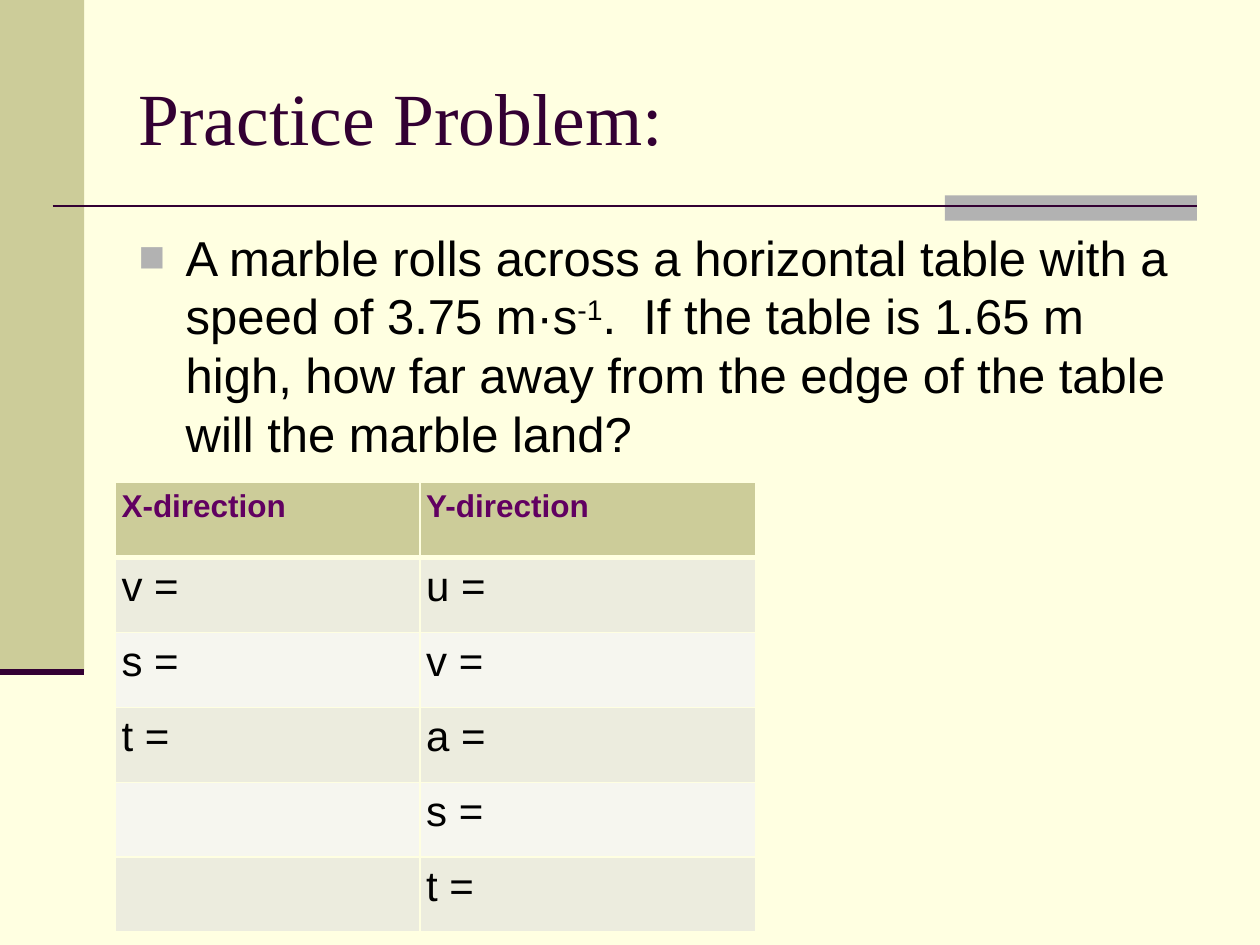
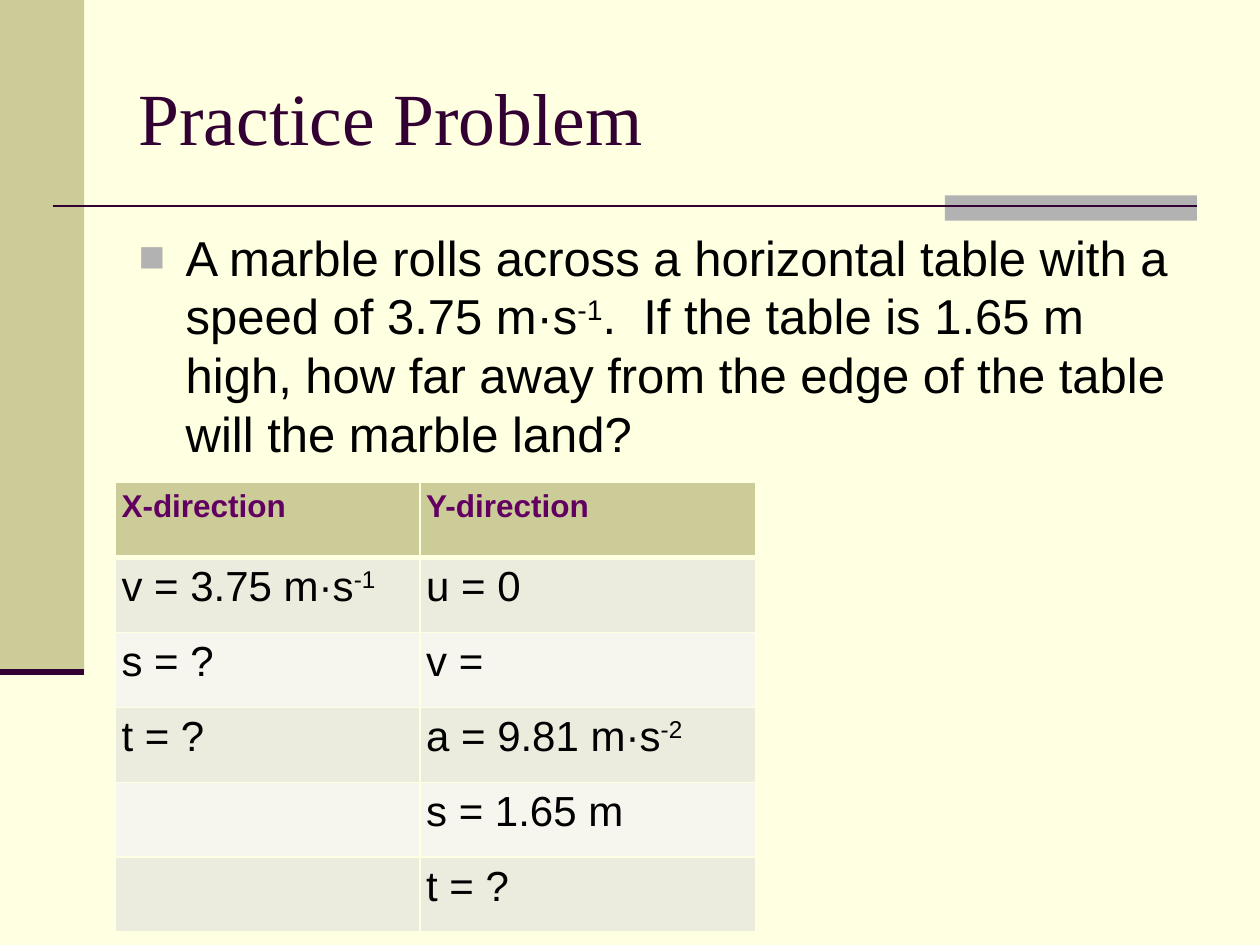
from lxml.etree import SubElement
from pptx import Presentation
from pptx.dml.color import RGBColor
from pptx.enum.shapes import MSO_CONNECTOR, MSO_SHAPE
from pptx.enum.text import MSO_ANCHOR, PP_ALIGN
from pptx.oxml import parse_xml
from pptx.oxml.ns import nsdecls, qn
from pptx.util import Cm, Pt

CREAM, OLIVE, GREY, PLUM = "FFFFE1", "CCCC99", "B2B2B2", "330033"
HEAD, BLACK = "610061", "000000"
BANDS = ["F6F6EF", "ECECDE"]

TASK = ("A marble rolls across a horizontal table with a speed of 3.75 m·s^-1^."
        "  If the table is 1.65 m high, how far away from the edge of the table"
        " will the marble land?")
NAMES = ("X-direction", "Y-direction")
PAGES = [
    ("Practice Problem:",
     [NAMES, ("v =", "u ="), ("s =", "v ="), ("t =", "a ="),
      ("", "s ="), ("", "t =")]),
    ("Practice Problem",
     [NAMES, ("v = 3.75 m·s^-1^", "u = 0"), ("s = ?", "v ="),
      ("t = ?", "a = 9.81 m·s^-2^"), ("", "s = 1.65 m"), ("", "t = ?")]),
]


def paint(target, tone):
    """Give a fill or a line one solid colour."""
    target.solid()
    target.fore_color.rgb = RGBColor.from_string(tone)


def write(par, text, face, size, tone, bold=False):
    """Write text in one style; parts between ^ marks are raised."""
    for i, part in enumerate(text.split("^")):
        if part:
            run = par.add_run()
            run.text = part
            font = run.font
            font.name, font.size, font.bold = face, Pt(size), bold
            font.color.rgb = RGBColor.from_string(tone)
            if i % 2:
                run._r.get_or_add_rPr().set("baseline", "30000")


deck = Presentation()
deck.slide_width, deck.slide_height = Cm(25.4), Cm(19.05)
paint(deck.slide_master.background.fill, CREAM)

for name, rows in PAGES:
    slide = deck.slides.add_slide(deck.slide_layouts[1])
    shapes = slide.shapes

    # Side band and accent bar
    for box, tone in [((0, 0, 1.7, 13.55), OLIVE),
                      ((19.05, 3.94, 5.08, 0.51), GREY)]:
        band = shapes.add_shape(MSO_SHAPE.RECTANGLE, *map(Cm, box))
        band.shadow.inherit = False
        paint(band.fill, tone)
        band.line.fill.background()

    # Rules under the title and the side band
    for left, right, y, width in [(1.06, 24.13, 4.15, 1.5),
                                  (0, 1.7, 13.55, 3.5)]:
        rule = shapes.add_connector(MSO_CONNECTOR.STRAIGHT,
                                    Cm(left), Cm(y), Cm(right), Cm(y))
        paint(rule.line.fill, PLUM)
        rule.line.width = Pt(width)
        SubElement(rule._element.spPr, qn("a:effectLst"))

    # Title
    title = shapes.title
    title.left, title.top, title.width, title.height = map(
        Cm, (2.54, 0.76, 21.59, 3.18))
    title.text_frame.vertical_anchor = MSO_ANCHOR.MIDDLE
    par = title.text_frame.paragraphs[0]
    par.alignment = PP_ALIGN.LEFT
    write(par, name, "Times New Roman", 42, PLUM)

    # Problem text with a square bullet
    body = slide.placeholders[1]
    body.left, body.top, body.width, body.height = map(
        Cm, (2.54, 4.45, 21.59, 12.57))
    par = body.text_frame.paragraphs[0]
    write(par, TASK, "Arial", 28, BLACK)
    par.space_before = Pt(5.6)
    props = par._p.get_or_add_pPr()
    props.set("marL", str(Cm(0.95)))
    props.set("indent", str(Cm(-0.95)))
    for mark in (f'<a:buClr {nsdecls("a")}><a:srgbClr val="{GREY}"/></a:buClr>',
                 f'<a:buSzPct {nsdecls("a")} val="90000"/>',
                 f'<a:buFont {nsdecls("a")} typeface="Arial"/>',
                 f'<a:buChar {nsdecls("a")} char="■"/>'):
        props.append(parse_xml(mark))

    # Table of knowns and unknowns
    grid = shapes.add_table(len(rows), 2, Cm(2.33), Cm(9.73),
                            Cm(12.91), Cm(9.06)).table
    for col, width in zip(grid.columns, (6.14, 6.77)):
        col.width = Cm(width)
    for i, row in enumerate(rows):
        grid.rows[i].height = Cm(1.51)
        for j, text in enumerate(row):
            cell = grid.cell(i, j)
            cell.margin_left = cell.margin_right = Cm(0.12)
            cell.margin_top = cell.margin_bottom = Cm(0.12)
            size, tone = (24, BLACK) if i else (18, HEAD)
            write(cell.text_frame.paragraphs[0], text, "Arial", size, tone,
                  i == 0)

            # Cell borders: a thicker one below the header
            for side in "LRTB":
                thick = (i, side) in [(0, "B"), (1, "T")]
                cell._tc.get_or_add_tcPr().append(parse_xml(
                    f'<a:ln{side} {nsdecls("a")} w="{Pt(3 if thick else 1)}">'
                    f'<a:solidFill><a:srgbClr val="{CREAM}"/></a:solidFill>'
                    f'</a:ln{side}>'))
            paint(cell.fill, BANDS[i % 2] if i else OLIVE)

deck.save("out.pptx")
